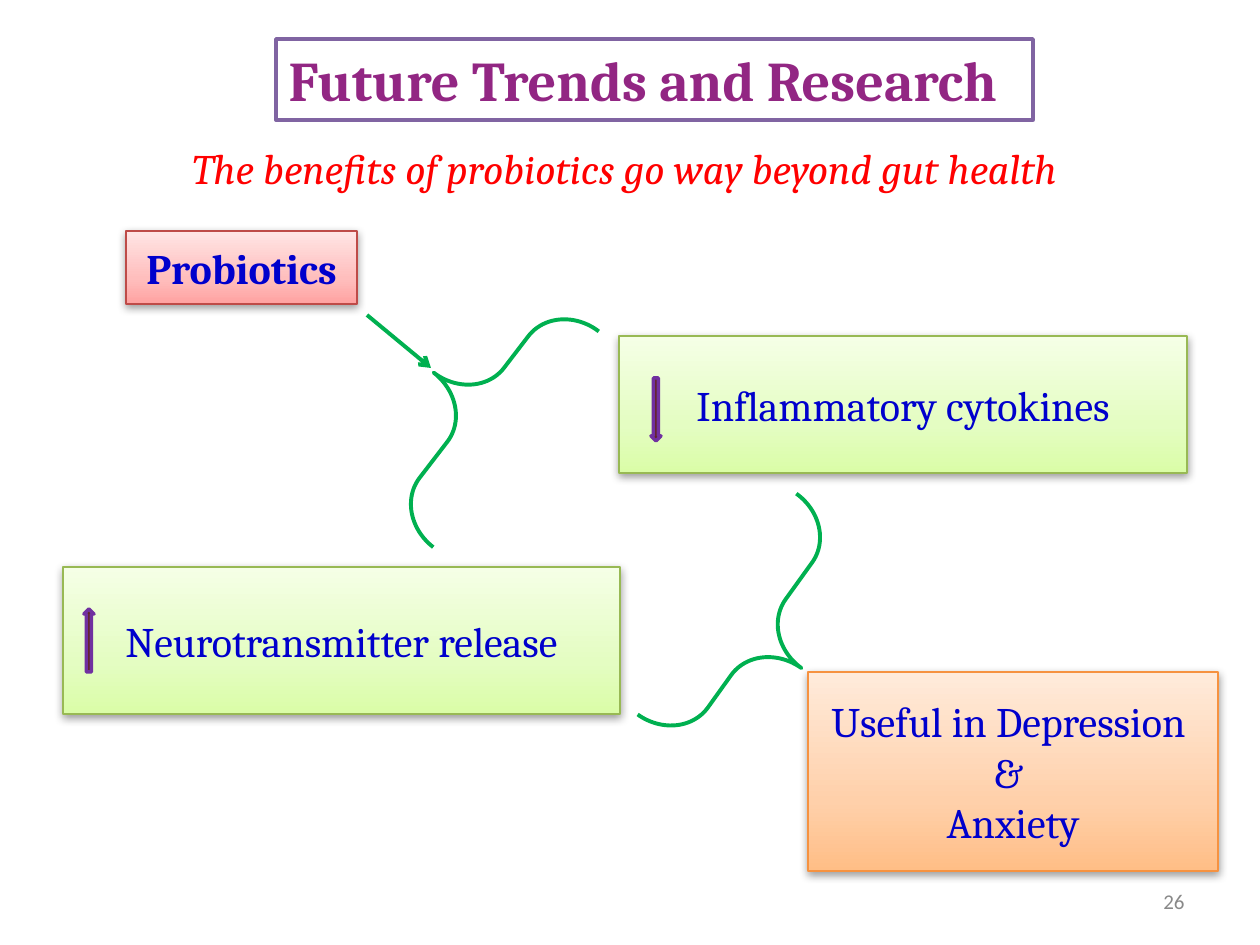
import copy
from dataclasses import dataclass
from typing import Any, Optional

import lxml.etree
import pptx
import pptx.dml.color
import pptx.enum.shapes
import pptx.enum.text
import pptx.oxml
import pptx.oxml.ns
import pptx.util

SHAPE = pptx.enum.shapes.MSO_SHAPE
ALIGN = pptx.enum.text.PP_ALIGN
ANCHOR = pptx.enum.text.MSO_ANCHOR
EMU_PER_PX = 914400 / 126

COLORS = {
    "white": "FFFFFF", "black": "000000", "title": "922683", "title_line": "8064A2",
    "tagline": "FF0000", "label": "0000CC", "number": "898989",
    "link": "00B050", "arrow": "632523", "arrow_line": "7030A0",
}
GRADIENTS = {
    "green": ("98B954", ("DAFDA7", "E4FDC2", "F5FFE6")),
    "orange": ("F69240", ("FFBE86", "FFD0AA", "FFEBDB")),
    "red": ("BE4B48", ("FFA2A1", "FFBEBD", "FFE5E5")),
}
LABEL = {"name": "Cambria", "size": pptx.util.Pt(24), "bold": False}


@dataclass(frozen=True)
class Area:
    left: int
    top: int
    width: int
    height: int

    def emu(self) -> tuple:
        return tuple(map(px, (self.left, self.top, self.width, self.height)))


@dataclass(frozen=True)
class Card:
    area: Area
    gradient: str
    lines: tuple
    bold: bool = False


@dataclass(frozen=True)
class Symbol:
    kind: Any
    area: Area
    line: str
    weight: float
    fill: Optional[str] = None
    rotation: float = 0
    adjustments: tuple = ()


CARDS = (
    Card(Area(619, 336, 568, 137), "green", ("Inflammatory cytokines",)),
    Card(Area(63, 567, 557, 147), "green", ("Neurotransmitter release",)),
    Card(Area(808, 672, 410, 199), "orange", ("Useful in Depression ", "& ", "Anxiety")),
    Card(Area(126, 231, 231, 73), "red", ("Probiotics",), True),
)
BRACE = {"line": "link", "weight": 2.25, "adjustments": (0.44, 0.51)}
ARROW = {"line": "arrow_line", "weight": 2, "fill": "arrow"}
SYMBOLS = (
    Symbol(SHAPE.RIGHT_BRACE, Area(707, 499, 106, 272), rotation=35.7, **BRACE),
    Symbol(SHAPE.RIGHT_BRACE, Area(421, 271, 106, 272), rotation=217.5, **BRACE),
    Symbol(SHAPE.DOWN_ARROW, Area(651, 378, 10, 63), **ARROW),
    Symbol(SHAPE.UP_ARROW, Area(84, 609, 10, 63), **ARROW),
)


def px(length: int) -> int:
    return round(length * EMU_PER_PX)


def rgb(value: str) -> pptx.dml.color.RGBColor:
    return pptx.dml.color.RGBColor.from_string(value)


def set_all(target: Any, values: dict) -> None:
    for name, value in values.items():
        setattr(target, name, value)


def set_line(line: Any, color: str, weight: float) -> None:
    line.color.rgb = rgb(color)
    line.width = pptx.util.Pt(weight)


def write(box: Any, lines: tuple, color: str, font: dict, align: Any, anchor: Any) -> None:
    frame = box.text_frame
    set_all(frame, {"word_wrap": True, "vertical_anchor": anchor,
                    "auto_size": pptx.enum.text.MSO_AUTO_SIZE.NONE})
    for index, line in enumerate(lines):
        para = frame.add_paragraph() if index else frame.paragraphs[0]
        para.alignment = align
        span = para.add_run()
        span.text = line
        set_all(span.font, font)
        span.font.color.rgb = rgb(COLORS[color])


def fill_gradient(box: Any, colors: tuple) -> None:
    box.fill.gradient()
    box.fill.gradient_angle = 90
    stops = box._element.spPr.find(".//" + pptx.oxml.ns.qn("a:gsLst"))
    stops.insert(1, copy.deepcopy(stops[0]))
    for stop, color, position in zip(box.fill.gradient_stops, colors, (0, 0.35, 1)):
        stop.color.rgb = rgb(color)
        stop.position = position


def add_shadow(box: Any) -> None:
    box.shadow.inherit = False
    effects = box._element.spPr.find(pptx.oxml.ns.qn("a:effectLst"))
    effects.append(pptx.oxml.parse_xml(
        f'<a:outerShdw {pptx.oxml.ns.nsdecls("a")} blurRad="63500" dist="20000" '
        f'dir="5400000" rotWithShape="0"><a:srgbClr val="{COLORS["black"]}">'
        '<a:alpha val="38000"/></a:srgbClr></a:outerShdw>'))


def add_card(page: Any, card: Card) -> None:
    box = page.shapes.add_shape(SHAPE.RECTANGLE, *card.area.emu())
    line, colors = GRADIENTS[card.gradient]
    fill_gradient(box, colors)
    set_line(box.line, line, 0.75)
    add_shadow(box)
    write(box, card.lines, "label", {**LABEL, "bold": card.bold}, ALIGN.CENTER, ANCHOR.MIDDLE)


def add_symbol(page: Any, symbol: Symbol) -> None:
    shape = page.shapes.add_shape(symbol.kind, *symbol.area.emu())
    shape.rotation = symbol.rotation
    shape.shadow.inherit = False
    for index, value in enumerate(symbol.adjustments):
        shape.adjustments[index] = value
    if symbol.fill:
        shape.fill.solid()
        shape.fill.fore_color.rgb = rgb(COLORS[symbol.fill])
    else:
        shape.fill.background()
    set_line(shape.line, COLORS[symbol.line], symbol.weight)


def add_link(page: Any, start: tuple, end: tuple) -> None:
    link = page.shapes.add_connector(
        pptx.enum.shapes.MSO_CONNECTOR.STRAIGHT, *map(px, start + end))
    set_line(link.line, COLORS["link"], 2.25)
    qn = pptx.oxml.ns.qn
    properties = link._element.spPr
    lxml.etree.SubElement(properties.find(qn("a:ln")), qn("a:tailEnd"), type="arrow")
    lxml.etree.SubElement(properties, qn("a:effectLst"))


def add_title(page: Any) -> None:
    title = page.shapes.title
    left, top, width, height = Area(276, 39, 757, 81).emu()
    set_all(title, {"left": left, "top": top, "width": width, "height": height})
    title.fill.solid()
    title.fill.fore_color.rgb = rgb(COLORS["white"])
    set_line(title.line, COLORS["title_line"], 2)
    font = {"name": "Cambria", "size": pptx.util.Pt(32), "bold": True}
    write(title, ("Future Trends and Research",), "title", font, ALIGN.LEFT, ANCHOR.TOP)


def main() -> None:
    deck = pptx.Presentation()
    set_all(deck, {"slide_width": px(1260), "slide_height": px(945)})
    page = deck.slides.add_slide(deck.slide_layouts[5])
    add_title(page)
    tagline = page.shapes.add_textbox(*Area(157, 136, 935, 64).emu())
    write(tagline, ("The benefits of probiotics go way beyond gut health",), "tagline",
          {**LABEL, "italic": True}, ALIGN.CENTER, ANCHOR.TOP)
    for card in CARDS:
        add_card(page, card)
    number = page.shapes.add_textbox(*Area(903, 876, 294, 50).emu())
    write(number, ("26",), "number", {"name": "Calibri", "size": pptx.util.Pt(12)},
          ALIGN.RIGHT, ANCHOR.MIDDLE)
    add_link(page, (367, 315), (431, 368))
    for symbol in SYMBOLS:
        add_symbol(page, symbol)
    deck.save("out.pptx")


if __name__ == "__main__":
    main()
